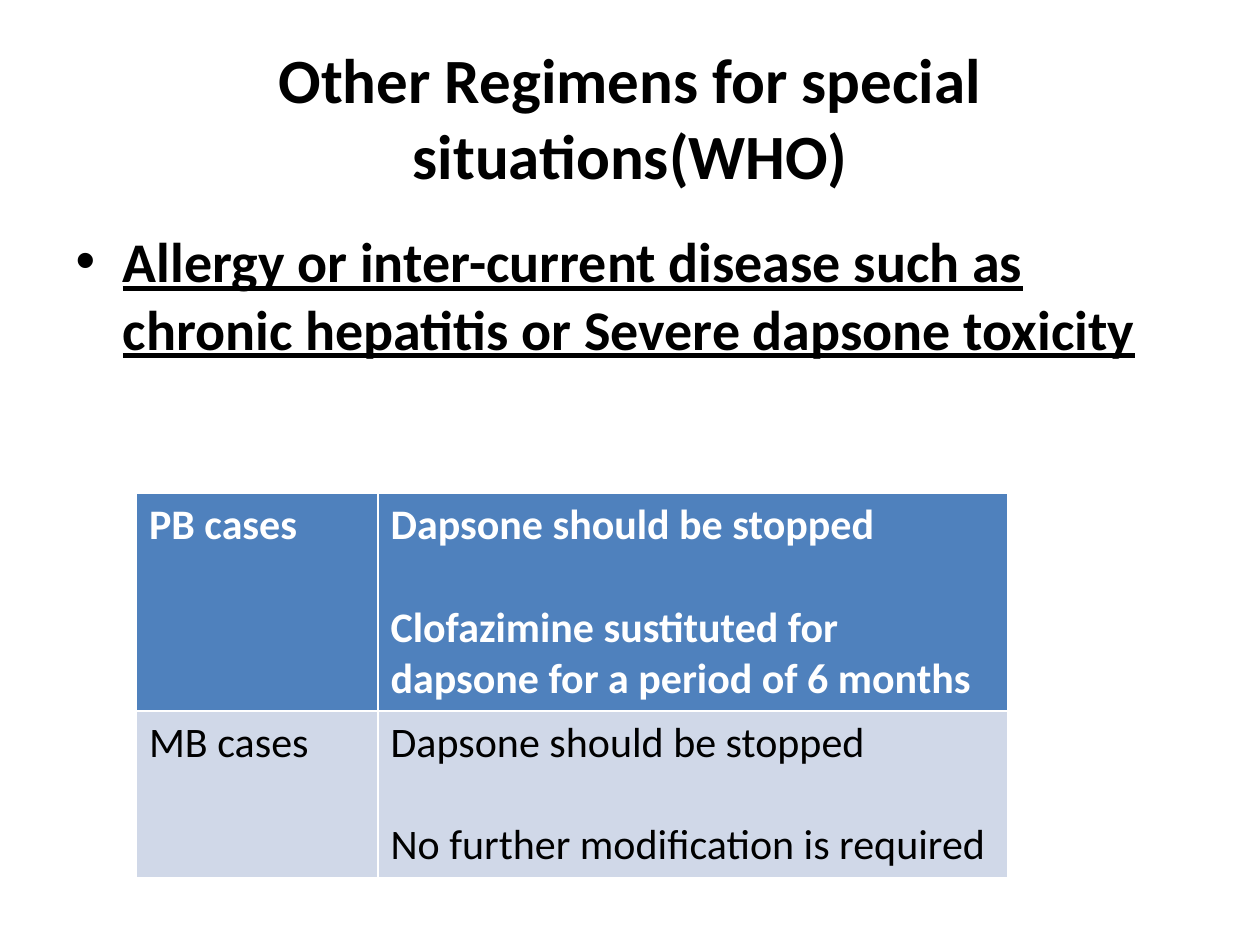
"""Builds a slide on special leprosy regimens with a two-row table."""
import pptx
import pptx.util
import pptx.dml.color
import pptx.enum.text

Pt = pptx.util.Pt
COLORS = {"text": "000000", "light": "FFFFFF", "header": "4F81BD", "band": "D0D8E8"}


class SlideBuilder:
    font = "Calibri"
    line_gap = Pt(29.3)

    def __init__(self, prs):
        self.s = prs.slides.add_slide(prs.slide_layouts[1])

    def color(self, name):
        return pptx.dml.color.RGBColor.from_string(COLORS[name])

    def format(self, tf, size, color="text", bold=False, underline=None):
        for p in tf.paragraphs:
            for r in p.runs:
                r.font.name = self.font
                r.font.size = Pt(size)
                r.font.bold = bold
                r.font.underline = underline
                r.font.color.rgb = self.color(color)

    def place(self, sp, left, top, width, height):
        sp.left, sp.top, sp.width, sp.height = map(Pt, (left, top, width, height))

    def title(self, text, box, size):
        sp = self.s.shapes.title
        self.place(sp, *box)
        tf = sp.text_frame
        tf.text = text
        tf.vertical_anchor = pptx.enum.text.MSO_ANCHOR.MIDDLE
        tf.paragraphs[0].alignment = pptx.enum.text.PP_ALIGN.CENTER
        self.format(tf, size, bold=True)

    def body(self, text, box, size):
        sp = self.s.placeholders[1]
        self.place(sp, *box)
        sp.text_frame.text = text
        self.format(sp.text_frame, size, bold=True, underline=True)

    def table(self, rows, left, top, widths, row_height, size):
        table = self.s.shapes.add_table(
            len(rows), len(widths), Pt(left), Pt(top),
            Pt(sum(widths)), Pt(row_height * len(rows))).table
        for column, width in zip(table.columns, widths):
            column.width = Pt(width)
        for i, row in enumerate(rows):
            header = i == 0
            for j, lines in enumerate(row):
                cell = table.cell(i, j)
                cell.fill.solid()
                cell.fill.fore_color.rgb = self.color("header" if header else "band")
                tf = cell.text_frame
                tf.text = "\n".join(lines)
                for p in tf.paragraphs[1:]:
                    p.space_before = self.line_gap
                self.format(tf, size, "light" if header else "text", bold=header)


def main():
    prs = pptx.Presentation()
    prs.slide_width, prs.slide_height = Pt(720), Pt(540)
    slide = SlideBuilder(prs)
    slide.title("Other Regimens for special situations(WHO)", (36, 21.6, 648, 90), 36)
    slide.body("Allergy or inter-current disease such as chronic hepatitis "
               "or Severe dapsone toxicity", (36, 126, 648, 356.4), 32)
    rows = [
        (["PB cases"], ["Dapsone should be stopped",
                        "Clofazimine sustituted for dapsone for a period of 6 months"]),
        (["MB cases"], ["Dapsone should be stopped",
                        "No further modification is required"]),
    ]
    slide.table(rows, 78, 282, (138, 360), 90, 24)
    prs.save("out.pptx")


if __name__ == "__main__":
    main()
